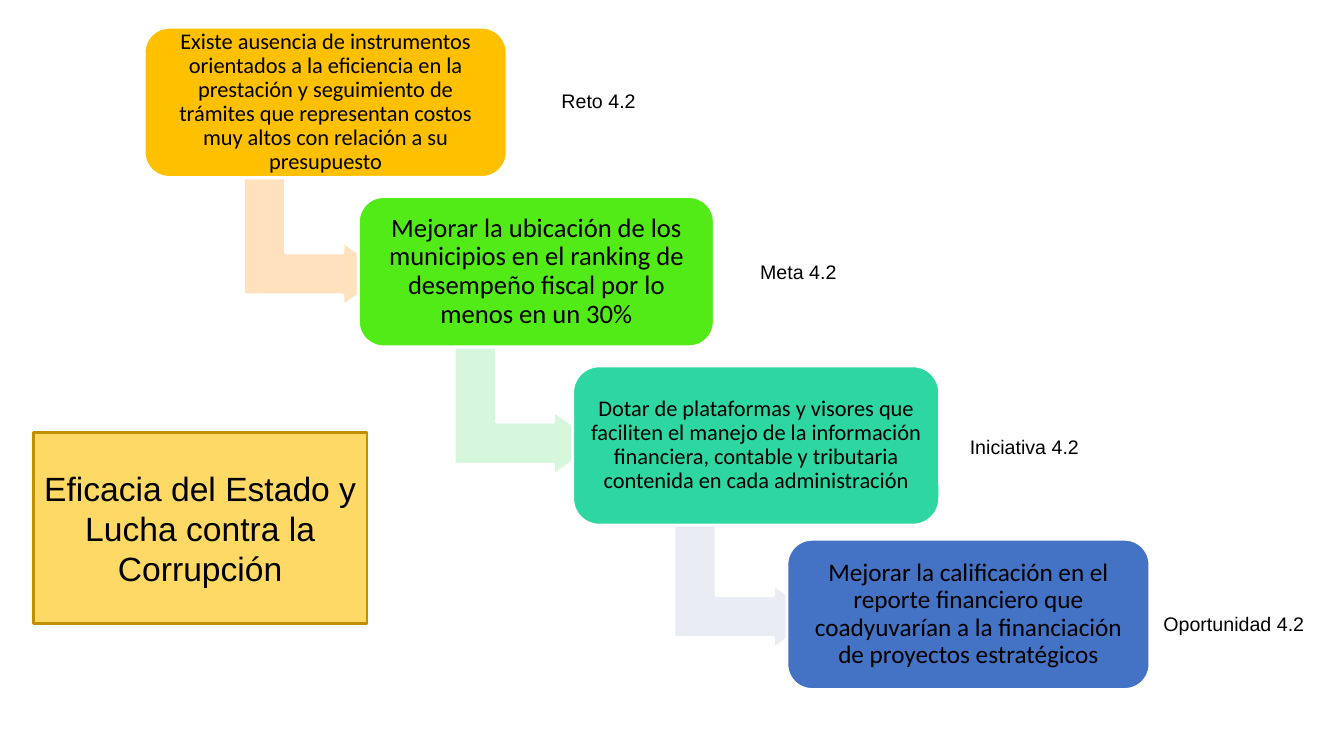
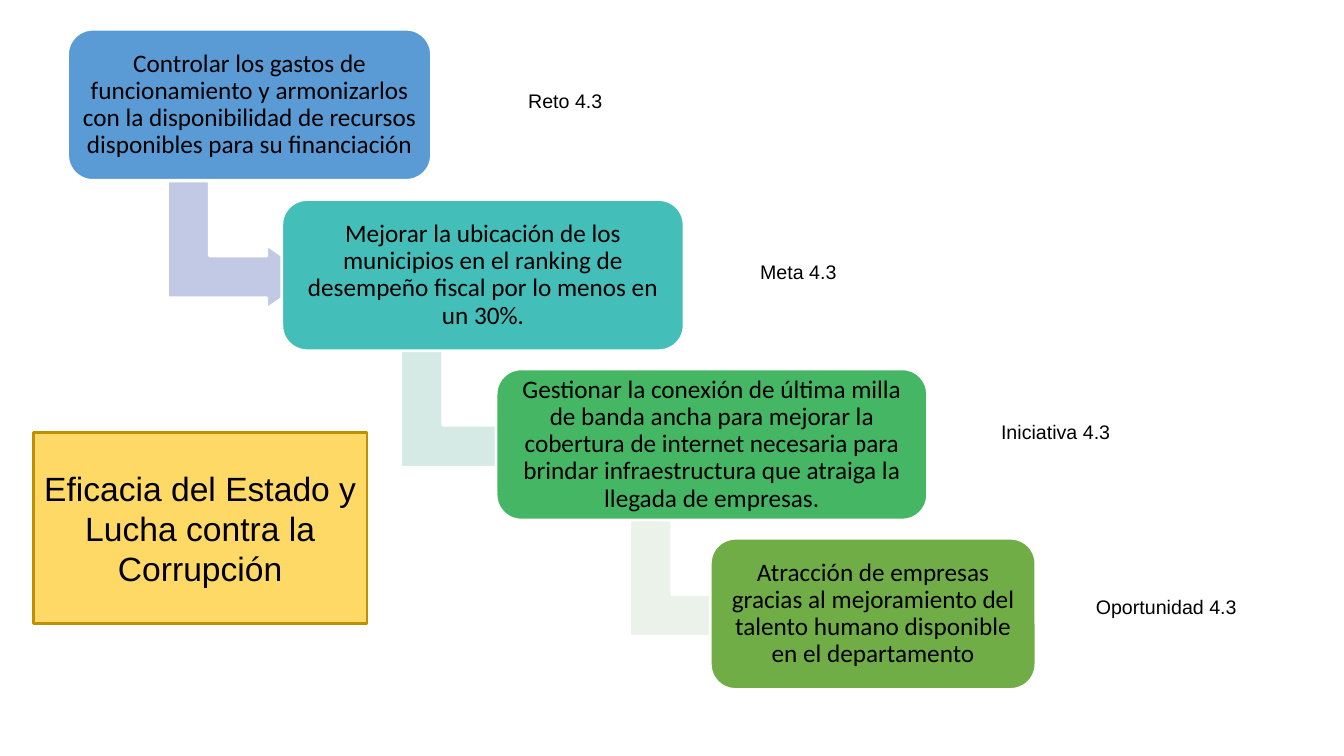
"""Build two staircase slides leading from challenge to opportunity."""
from pptx import Presentation
from pptx.dml.color import RGBColor
from pptx.enum import shapes, text
from pptx.util import Inches, Pt

THEME = "Eficacia del Estado y Lucha contra la Corrupción"
KINDS = [("Reto", 0.94), ("Meta", 0.96), ("Iniciativa", 1.29), ("Oportunidad", 1.6)]
STEP_X = 2.125
TURN = {"w": 1.27, "h": 1.44, "rise": 0.27, "shift": 0.73, "adj": (0.328, 0.25, 0.358)}
BODY = {"name": "Calibri"}
LABEL = {"name": "Arial", "size": Pt(14)}
TITLE = {"name": "Arial", "size": Pt(24)}

SLIDES = [
    {"code": "4.2", "left": 1.43, "steps": [
        {"text": "Existe ausencia de instrumentos orientados a la eficiencia en la prestación y "
                 "seguimiento de trámites que representan costos muy altos con relación a su presupuesto",
         "size": 16, "top": 0.27, "w": 3.6, "h": 1.49, "fill": "FFC000", "turn": "FFE2BD",
         "label": (5.47, 0.83)},
        {"text": "Mejorar la ubicación de los municipios en el ranking de desempeño fiscal "
                 "por lo menos en un 30%",
         "size": 19, "top": 1.95, "w": 3.53, "h": 1.49, "fill": "53EB17", "turn": "D6F7DB",
         "label": (7.44, 2.53)},
        {"text": "Dotar de plataformas y visores que faciliten el manejo de la información "
                 "financiera, contable y tributaria contenida en cada administración",
         "size": 16, "top": 3.63, "w": 3.64, "h": 1.58, "fill": "2ED7A1", "turn": "E9ECF5",
         "label": (9.52, 4.27)},
        {"text": "Mejorar la calificación en el reporte financiero que coadyuvarían a la "
                 "financiación de proyectos estratégicos",
         "size": 18, "top": 5.35, "w": 3.6, "h": 1.49, "fill": "4472C4",
         "label": (11.44, 6.02)},
    ]},
    {"code": "4.3", "left": 0.67, "steps": [
        {"text": "Controlar los gastos de funcionamiento y armonizarlos con la disponibilidad "
                 "de recursos disponibles para su financiación",
         "size": 18, "top": 0.29, "w": 3.61, "h": 1.5, "fill": "5B9BD5", "turn": "C1C9E4",
         "label": (5.14, 0.83)},
        {"text": "Mejorar la ubicación de los municipios en el ranking de desempeño fiscal "
                 "por lo menos en un 30%.",
         "size": 18, "top": 1.98, "w": 3.99, "h": 1.5, "fill": "43BEB9", "turn": "D6EAE5",
         "label": (7.44, 2.53)},
        {"text": "Gestionar la conexión de última milla de banda ancha para mejorar la cobertura "
                 "de internet necesaria para brindar infraestructura que atraiga la llegada de empresas.",
         "size": 18, "top": 3.66, "w": 4.28, "h": 1.5, "fill": "45B664", "turn": "EBF2E9",
         "label": (9.83, 4.12)},
        {"text": "Atracción de empresas gracias al mejoramiento del talento humano disponible "
                 "en el departamento",
         "size": 18, "top": 5.34, "w": 3.23, "h": 1.5, "fill": "70AD47",
         "label": (10.77, 5.85)},
    ]},
]


def color(code):
    """Turn a hex string into a colour."""
    return RGBColor.from_string(code)


def write(shape, words, style, **para):
    """Put one styled paragraph into a shape."""
    line = shape.text_frame.paragraphs[0]
    line.text = words
    for key, value in para.items():
        setattr(line, key, value)
    for key, value in style.items():
        setattr(line.font, key, value)
    line.font.color.rgb = color("000000")


def draw(slide, kind, spot, fill, edge="FFFFFF", adj=()):
    """Add a filled preset shape with a two-point outline."""
    shape = slide.shapes.add_shape(kind, *map(Inches, spot))
    shape.shadow.inherit = False
    shape.fill.solid()
    shape.fill.fore_color.rgb = color(fill)
    shape.line.color.rgb = color(edge)
    shape.line.width = Pt(2)
    for index, value in enumerate(adj):
        shape.adjustments[index] = value
    return shape


def add_label(slide, words, spot, width):
    """Add the short name beside a step."""
    box = slide.shapes.add_textbox(*map(Inches, (*spot, width, 0.34)))
    box.text_frame.word_wrap = False
    box.text_frame.auto_size = text.MSO_AUTO_SIZE.SHAPE_TO_FIT_TEXT
    write(box, words, LABEL)


def add_turn(slide, step, left, below):
    """Add the bent arrow from a step to the one below."""
    spot = (left + step["w"] / 2 - TURN["shift"], below["top"] - TURN["rise"], TURN["w"], TURN["h"])
    arrow = draw(slide, shapes.MSO_SHAPE.BENT_UP_ARROW, spot, step["turn"], adj=TURN["adj"])
    arrow.rotation = 90


def add_step(slide, step, left):
    """Add one rounded step with its text."""
    spot = (left, step["top"], step["w"], step["h"])
    box = draw(slide, shapes.MSO_SHAPE.ROUNDED_RECTANGLE, spot, step["fill"], adj=(0.167,))
    frame = box.text_frame
    for side in ("left", "right", "top", "bottom"):
        setattr(frame, f"margin_{side}", Inches(0.07))
    frame.vertical_anchor = text.MSO_ANCHOR.MIDDLE
    write(box, step["text"], {**BODY, "size": Pt(step["size"])},
          alignment=text.PP_ALIGN.CENTER, line_spacing=0.9)


def add_theme(slide):
    """Add the theme box shared by the slides."""
    box = draw(slide, shapes.MSO_SHAPE.RECTANGLE, (0.33, 4.29, 3.31, 1.9), "FFD966", "BF9000")
    box.text_frame.vertical_anchor = text.MSO_ANCHOR.MIDDLE
    write(box, THEME, TITLE, alignment=text.PP_ALIGN.CENTER)


def build(deck, data):
    """Build one staircase slide."""
    slide = deck.slides.add_slide(deck.slide_layouts[6])
    steps = data["steps"]
    for (kind, width), step in zip(KINDS, steps):
        add_label(slide, f"{kind} {data['code']}", step["label"], width)
    for index, step in enumerate(steps):
        left = data["left"] + index * STEP_X
        if "turn" in step:
            add_turn(slide, step, left, steps[index + 1])
        add_step(slide, step, left)
    add_theme(slide)


def main():
    """Build and save the deck."""
    deck = Presentation()
    deck.slide_width, deck.slide_height = Inches(13.33), Inches(7.5)
    for data in SLIDES:
        build(deck, data)
    deck.save("out.pptx")


if __name__ == "__main__":
    main()
